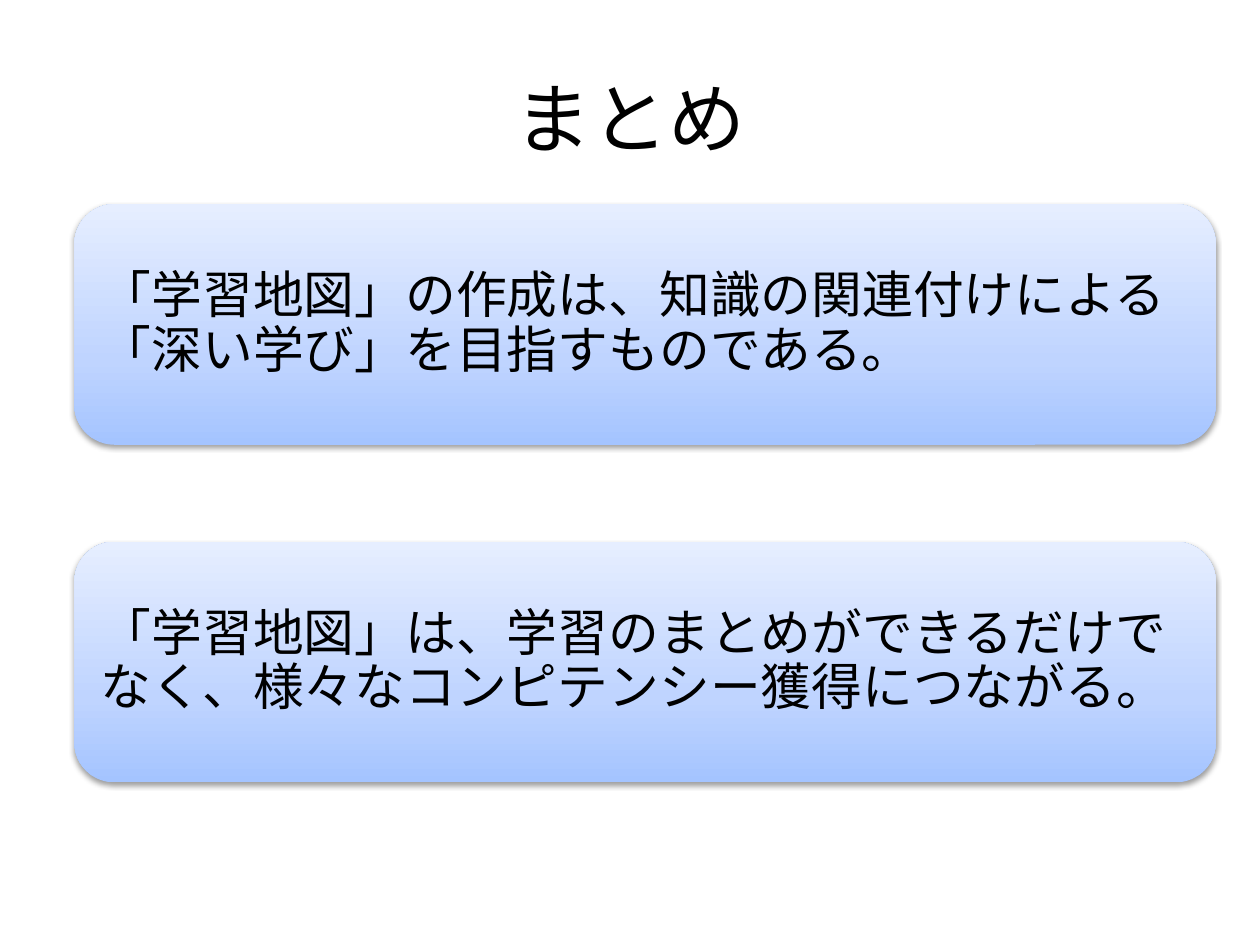
import copy
from dataclasses import dataclass

import pptx
import pptx.dml.color
import pptx.enum.dml
import pptx.enum.shapes
import pptx.enum.text
import pptx.oxml
import pptx.oxml.ns
import pptx.util

Inches = pptx.util.Inches
Pt = pptx.util.Pt
ALIGN = pptx.enum.text.PP_ALIGN

FONT = "Roboto"
CARD_LEFT, CARD_WIDTH, CARD_HEIGHT = 0.59, 9.06, 1.91
TEXT_INSET = 0.09
CARD_GRADIENT = [(0, "A4C4FF"), (0.35, "BFD4FF"), (1, "E6EEFF")]
SHADOW_XML = (
    f'<a:effectLst {pptx.oxml.ns.nsdecls("a")}>'
    '<a:outerShdw blurRad="39370" dist="20320" dir="5400000" rotWithShape="0">'
    '<a:srgbClr val="000000"><a:alpha val="38000"/></a:srgbClr>'
    "</a:outerShdw></a:effectLst>"
)


@dataclass
class Card:
    top: float
    message: str


CARDS = [
    Card(1.62, "「学習地図」の作成は、知識の関連付けによる「深い学び」を目指すものである。"),
    Card(4.3, "「学習地図」は、学習のまとめができるだけでなく、様々なコンピテンシー獲得につながる。"),
]


def color(hex_code: str) -> pptx.dml.color.RGBColor:
    return pptx.dml.color.RGBColor.from_string(hex_code)


def write(frame, text: str, *, size: float, align=ALIGN.LEFT, hex_code: str = "000000",
          line_spacing: float = 1.0, space_after: float = 0) -> None:
    frame.word_wrap = True
    frame.vertical_anchor = pptx.enum.text.MSO_ANCHOR.MIDDLE
    paragraph = frame.paragraphs[0]
    paragraph.alignment = align
    paragraph.line_spacing = line_spacing
    paragraph.space_after = Pt(space_after)
    run = paragraph.add_run()
    run.text = text
    run.font.name = FONT
    run.font.size = Pt(size)
    run.font.color.rgb = color(hex_code)


def fill_gradient(fill, stops: list[tuple[float, str]], angle: float) -> None:
    fill.gradient()
    fill.gradient_angle = angle
    stop_list = fill.gradient_stops[0]._gs.getparent()
    # The default gradient has two stops; extend it to the number needed
    for _ in stops[2:]:
        stop_list.append(copy.deepcopy(stop_list[-1]))
    for stop, (position, hex_code) in zip(fill.gradient_stops, stops):
        stop.position = position
        stop.color.rgb = color(hex_code)


def draw_card(slide, card: Card) -> None:
    # Rounded panel with a soft shadow below
    panel = slide.shapes.add_shape(
        pptx.enum.shapes.MSO_SHAPE.ROUNDED_RECTANGLE,
        Inches(CARD_LEFT), Inches(card.top), Inches(CARD_WIDTH), Inches(CARD_HEIGHT))
    fill_gradient(panel.fill, CARD_GRADIENT, 90)
    panel.line.fill.background()
    panel._element.spPr.append(pptx.oxml.parse_xml(SHADOW_XML))

    # Message inside the panel
    message = slide.shapes.add_textbox(
        Inches(CARD_LEFT + TEXT_INSET), Inches(card.top + TEXT_INSET),
        Inches(CARD_WIDTH - 2 * TEXT_INSET), Inches(CARD_HEIGHT - 2 * TEXT_INSET))
    frame = message.text_frame
    frame.margin_left = frame.margin_right = Inches(0.12)
    frame.margin_top = frame.margin_bottom = Inches(0.12)
    write(frame, card.message, size=29, line_spacing=0.9, space_after=10)


def main() -> None:
    deck = pptx.Presentation()
    deck.slide_width, deck.slide_height = Inches(10), Inches(7.5)
    slide = deck.slides.add_slide(deck.slide_layouts[5])

    # Title
    title = slide.shapes.title
    title.left, title.top = Inches(0.5), Inches(0.3)
    title.width, title.height = Inches(9), Inches(1.25)
    write(title.text_frame, "まとめ", size=44, align=ALIGN.CENTER)

    # Summary cards
    for card in CARDS:
        draw_card(slide, card)

    deck.save("out.pptx")


if __name__ == "__main__":
    main()
